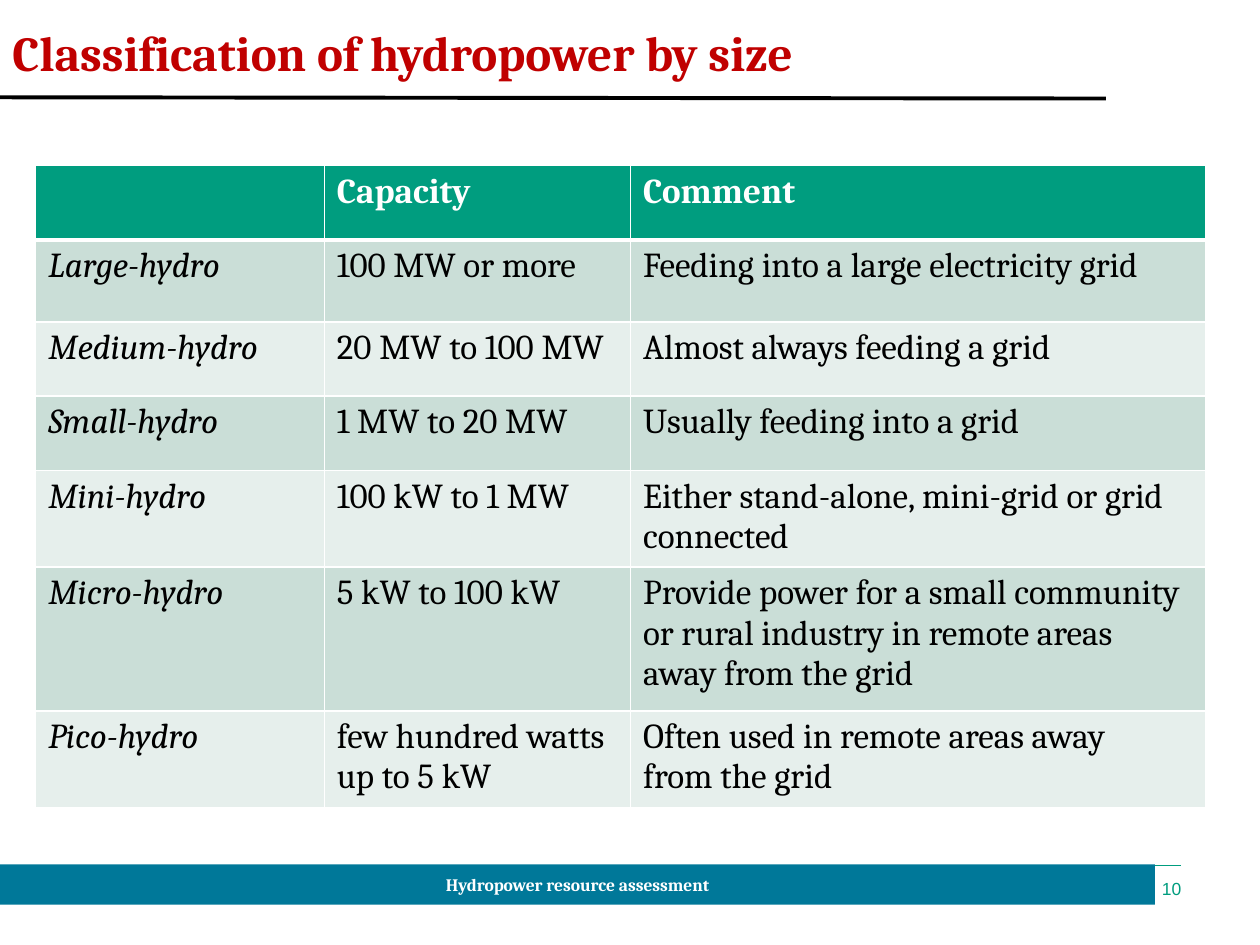
from dataclasses import dataclass

from lxml.etree import SubElement
from pptx import Presentation
from pptx.dml.color import RGBColor
from pptx.enum.shapes import MSO_CONNECTOR, MSO_SHAPE
from pptx.enum.text import MSO_ANCHOR, PP_ALIGN
from pptx.oxml import parse_xml
from pptx.oxml.ns import nsdecls, qn
from pptx.util import Pt


@dataclass(frozen=True)
class Theme:
    """Colours, fonts and type sizes of the slide."""
    red: str = "C00000"
    green: str = "009D7F"
    blue: str = "007899"
    black: str = "000000"
    white: str = "FFFFFF"
    bands: tuple = ("CADED7", "E6EFEC")
    serif: str = "Cambria"
    sans: str = "Arial"
    title: int = 28
    body: int = 20
    small: int = 10


THEME = Theme()
WIDTHS = (164.9, 175, 329)
HEIGHTS = (42.5, 46.8, 42.5, 42.5, 46.8, 82.1, 46.8)
ROWS = (
    ("", "Capacity", "Comment"),
    ("Large-hydro", "100 MW or more", "Feeding into a large electricity grid"),
    ("Medium-hydro", "20 MW to 100 MW", "Almost always feeding a grid"),
    ("Small-hydro", "1 MW to 20 MW", "Usually feeding into a grid"),
    ("Mini-hydro", "100 kW to 1 MW", "Either stand-alone, mini-grid or grid connected"),
    ("Micro-hydro", "5 kW to 100 kW",
     "Provide power for a small community or rural industry in remote areas away from the grid"),
    ("Pico-hydro", "few hundred watts up to 5 kW",
     "Often used in remote areas away\nfrom the grid"),
)


def write(frame, text, size, color, face=THEME.serif, bold=False, italic=False, align=None):
    """Fill a text frame and format its runs."""
    frame.word_wrap = True
    frame.text = text
    for para in frame.paragraphs:
        para.alignment = align
        for run in para.runs:
            font = run.font
            font.name, font.size = face, Pt(size)
            font.bold, font.italic = bold, italic
            font.color.rgb = RGBColor.from_string(color)


def rule(slide, start, end, color, width):
    """Draw a straight line without a shadow."""
    line = slide.shapes.add_connector(
        MSO_CONNECTOR.STRAIGHT, *map(Pt, start), *map(Pt, end))
    line.line.color.rgb = RGBColor.from_string(color)
    line.line.width = Pt(width)
    SubElement(line.element.spPr, qn("a:effectLst"))


def edge(cell, base):
    """Give a cell white borders, the bottom one of the given width."""
    props = cell._tc.get_or_add_tcPr()
    for spot, side in enumerate("LRTB"):
        width = Pt(base if side == "B" else 1)
        props.insert(spot, parse_xml(
            f'<a:ln{side} {nsdecls("a")} w="{width}"><a:solidFill>'
            f'<a:srgbClr val="{THEME.white}"/></a:solidFill></a:ln{side}>'))


def header(slide, left, top, width, height):
    """Place the title and the rule below it."""
    box = slide.shapes.add_textbox(Pt(left), Pt(top), Pt(width), Pt(height))
    write(box.text_frame, "Classification of hydropower by size",
          THEME.title, THEME.red, bold=True)
    base = top + height + 5
    rule(slide, (left, base), (left + 632, base + 0.7), THEME.black, 2.25)


def grid(slide, left, top, width, height):
    """Place the table of hydropower classes."""
    table = slide.shapes.add_table(
        len(ROWS), len(WIDTHS), Pt(left), Pt(top), Pt(width), Pt(height)).table
    for col, size in zip(table.columns, WIDTHS):
        col.width = Pt(size)
    for r, (row, size) in enumerate(zip(ROWS, HEIGHTS)):
        table.rows[r].height = Pt(size)
        head = r == 0
        fill = THEME.green if head else THEME.bands[(r - 1) % 2]
        color = THEME.white if head else THEME.black
        for c, text in enumerate(row):
            cell = table.cell(r, c)
            cell.fill.solid()
            cell.fill.fore_color.rgb = RGBColor.from_string(fill)
            edge(cell, 3 if head else 1)
            write(cell.text_frame, text, THEME.body, color,
                  bold=head, italic=not head and c == 0)


def footer(slide, left, top, width, height):
    """Place the bottom rule, the page number and the banner."""
    rule(slide, (left + 45, top + 0.7), (left + 675, top + 0.7), THEME.green, 1)
    page = slide.shapes.add_textbox(Pt(left + 651), Pt(top + 8), Pt(24), Pt(12))
    frame = page.text_frame
    frame.margin_left = frame.margin_right = frame.margin_top = frame.margin_bottom = 0
    frame.vertical_anchor = MSO_ANCHOR.MIDDLE
    write(frame, "10", THEME.small, THEME.green, THEME.sans, align=PP_ALIGN.RIGHT)
    bar = slide.shapes.add_shape(
        MSO_SHAPE.RECTANGLE, Pt(left), Pt(top), Pt(width), Pt(height))
    bar.shadow.inherit = False
    bar.fill.solid()
    bar.fill.fore_color.rgb = RGBColor.from_string(THEME.blue)
    bar.line.fill.background()
    bar.text_frame.vertical_anchor = MSO_ANCHOR.MIDDLE
    write(bar.text_frame, "Hydropower resource assessment",
          THEME.small, THEME.white, bold=True, align=PP_ALIGN.CENTER)


def main():
    """Build the slide and save it."""
    deck = Presentation()
    deck.slide_width, deck.slide_height = Pt(720), Pt(540)
    slide = deck.slides.add_slide(deck.slide_layouts[6])
    footer(slide, 0, 493.9, 660, 23)
    header(slide, 0, 9.4, 570, 41.2)
    grid(slide, 20.4, 94.6, sum(WIDTHS), sum(HEIGHTS))
    deck.save("out.pptx")


if __name__ == "__main__":
    main()
